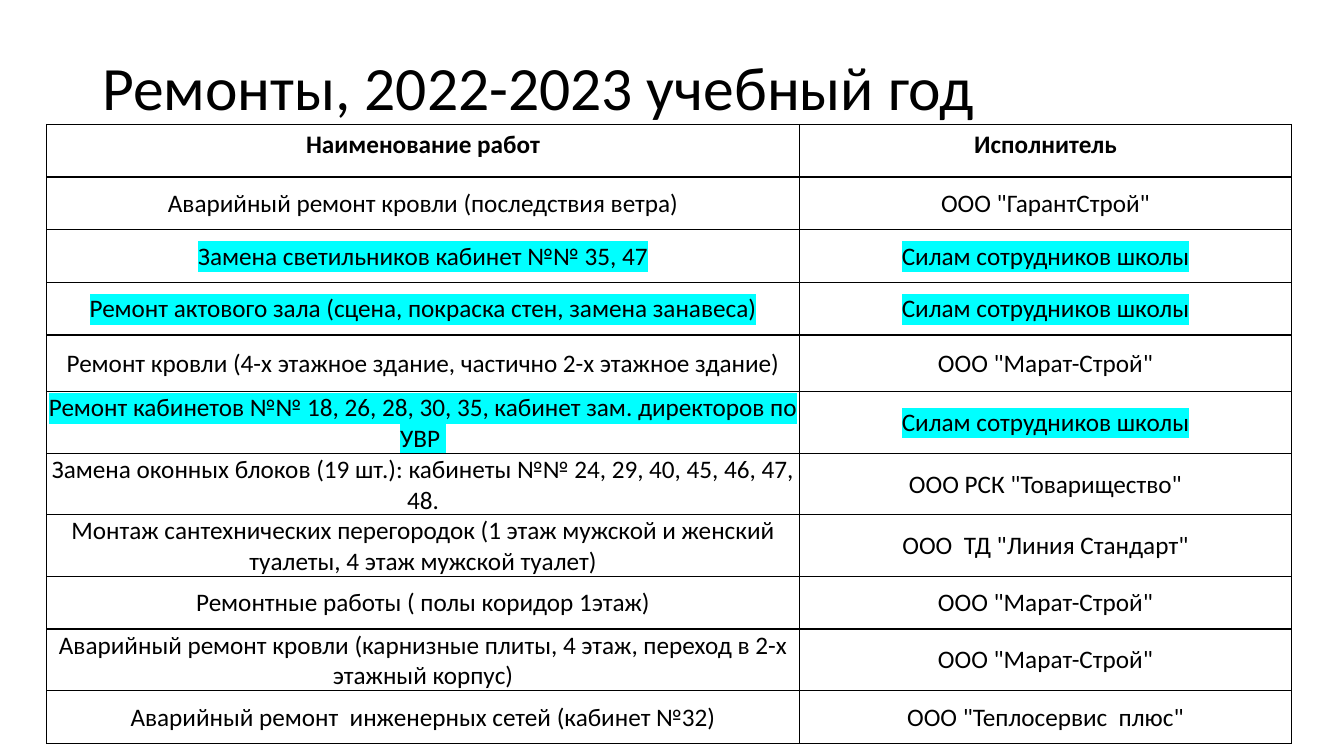
from dataclasses import dataclass

from lxml.etree import SubElement
from pptx import Presentation
from pptx.dml.color import RGBColor
from pptx.enum.text import MSO_ANCHOR, PP_ALIGN
from pptx.oxml.ns import qn
from pptx.slide import Slide
from pptx.table import _Cell
from pptx.text.text import _Paragraph
from pptx.util import Pt

BLACK = RGBColor(0x00, 0x00, 0x00)
WHITE = RGBColor(0xFF, 0xFF, 0xFF)
CYAN = RGBColor(0x00, 0xFF, 0xFF)
FONT = "Calibri"
COLUMN_WIDTHS = (537.8, 351.4)
SCHOOL_STAFF = "Силам сотрудников школы"
ROOFER = 'ООО "Марат-Строй"'


@dataclass(frozen=True)
class Repair:
    work: str
    contractor: str
    height: float = 37.6
    highlighted: bool = False
    header: bool = False


REPAIRS = (
    Repair("Наименование работ", "Исполнитель", header=True),
    Repair("Аварийный ремонт кровли (последствия ветра)", 'ООО "ГарантСтрой"'),
    Repair("Замена светильников кабинет №№ 35, 47", SCHOOL_STAFF, highlighted=True),
    Repair("Ремонт актового зала (сцена, покраска стен, замена занавеса)",
           SCHOOL_STAFF, highlighted=True),
    Repair("Ремонт кровли (4-х этажное здание, частично 2-х этажное здание)",
           ROOFER, height=40.6),
    Repair("Ремонт кабинетов №№ 18, 26, 28, 30, 35, кабинет зам. директоров по УВР ",
           SCHOOL_STAFF, height=40.6, highlighted=True),
    Repair("Замена оконных блоков (19 шт.): кабинеты №№ 24, 29, 40, 45, 46, 47, 48.",
           'ООО РСК "Товарищество"', height=40.6),
    Repair("Монтаж сантехнических перегородок (1 этаж мужской и женский туалеты, "
           "4 этаж мужской туалет)", 'ООО  ТД "Линия Стандарт"', height=40.6),
    Repair("Ремонтные работы ( полы коридор 1этаж)", ROOFER),
    Repair("Аварийный ремонт кровли (карнизные плиты, 4 этаж, переход в 2-х "
           "этажный корпус)", ROOFER, height=39),
    Repair("Аварийный ремонт  инженерных сетей (кабинет №32)", 'ООО "Теплосервис  плюс"'),
)


def style_paragraph(para: _Paragraph, size: float, bold: bool = False) -> None:
    para.font.name = FONT
    para.font.size = Pt(size)
    para.font.bold = bold
    para.font.color.rgb = BLACK


def add_borders(cell: _Cell) -> None:
    properties = cell._tc.get_or_add_tcPr()
    for side in ("a:lnL", "a:lnR", "a:lnT", "a:lnB"):
        line = SubElement(properties, qn(side), w=str(Pt(1)))
        fill = SubElement(line, qn("a:solidFill"))
        SubElement(fill, qn("a:srgbClr"), val=str(BLACK))


def fill_cell(cell: _Cell, text: str, repair: Repair) -> None:
    add_borders(cell)
    cell.fill.solid()
    cell.fill.fore_color.rgb = WHITE
    if not repair.header:
        cell.vertical_anchor = MSO_ANCHOR.MIDDLE
        cell.margin_left = cell.margin_right = cell.margin_top = Pt(0.75)
        cell.margin_bottom = Pt(0)
    para = cell.text_frame.paragraphs[0]
    para.alignment = PP_ALIGN.CENTER
    style_paragraph(para, 18, repair.header)
    span = para.add_run()
    span.text = text
    if repair.highlighted:
        highlight = SubElement(span._r.get_or_add_rPr(), qn("a:highlight"))
        SubElement(highlight, qn("a:srgbClr"), val=str(CYAN))


def add_title(page: Slide) -> None:
    box = page.shapes.add_textbox(Pt(66), Pt(28.75), Pt(828), Pt(71.3))
    frame = box.text_frame
    frame.word_wrap = True
    frame.vertical_anchor = MSO_ANCHOR.MIDDLE
    para = frame.paragraphs[0]
    para.text = "Ремонты, 2022-2023 учебный год"
    para.line_spacing = 0.9
    style_paragraph(para, 44)


def add_repairs_table(page: Slide) -> None:
    height = sum(repair.height for repair in REPAIRS)
    table = page.shapes.add_table(
        len(REPAIRS), len(COLUMN_WIDTHS),
        Pt(33.3), Pt(88.9), Pt(sum(COLUMN_WIDTHS)), Pt(height),
    ).table
    table.first_row = False
    table.horz_banding = False
    for column, width in zip(table.columns, COLUMN_WIDTHS):
        column.width = Pt(width)
    for row, repair in zip(table.rows, REPAIRS):
        row.height = Pt(repair.height)
        for cell, text in zip(row.cells, (repair.work, repair.contractor)):
            fill_cell(cell, text, repair)


def main() -> None:
    deck = Presentation()
    deck.slide_width = Pt(960)
    deck.slide_height = Pt(540)
    page = deck.slides.add_slide(deck.slide_layouts[6])
    add_title(page)
    add_repairs_table(page)
    deck.save("out.pptx")


if __name__ == "__main__":
    main()
